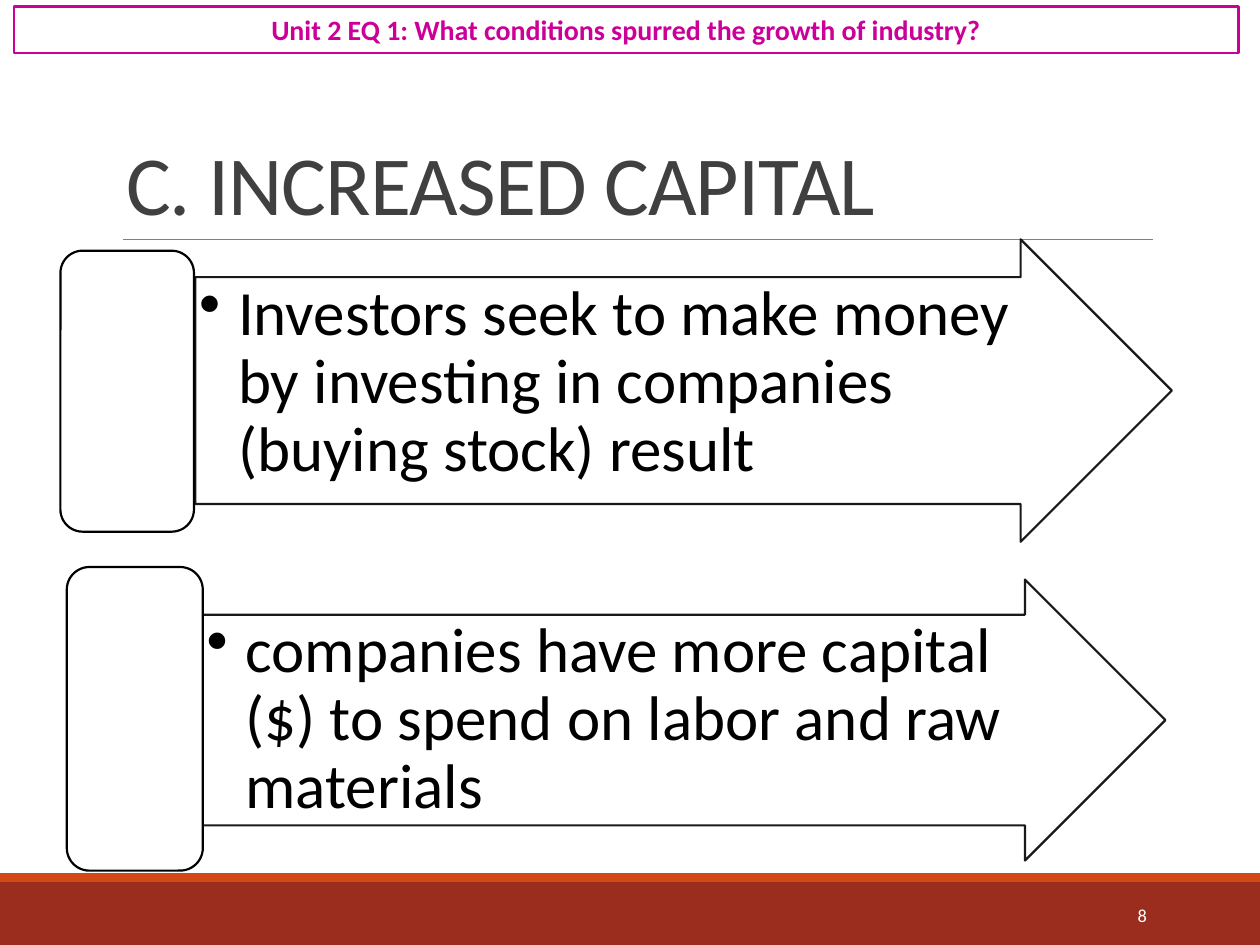
import pptx
import pptx.util
import pptx.dml.color
import pptx.enum.shapes
import pptx.enum.text
from lxml import etree
from pptx.oxml.ns import qn

Inches, Pt = pptx.util.Inches, pptx.util.Pt
KIND = pptx.enum.shapes.MSO_SHAPE
ALIGN = pptx.enum.text.PP_ALIGN
ANCHOR = pptx.enum.text.MSO_ANCHOR


def paint(shape, fill, line=None, width=1.25):
    shape.shadow.inherit = False
    shape.fill.solid()
    shape.fill.fore_color.rgb = pptx.dml.color.RGBColor.from_string(fill)
    if line:
        shape.line.color.rgb = pptx.dml.color.RGBColor.from_string(line)
        shape.line.width = Pt(width)
    else:
        shape.line.fill.background()


def write(shape, text, color, font, para=None, frame=None):
    body = shape.text_frame
    for name, value in {"word_wrap": True, **(frame or {})}.items():
        setattr(body, name, value)
    item = body.paragraphs[0]
    for name, value in (para or {}).items():
        setattr(item, name, value)
    run = item.add_run()
    run.text = text
    for name, value in {"name": "Calibri", **font}.items():
        setattr(run.font, name, value)
    run.font.color.rgb = pptx.dml.color.RGBColor.from_string(color)
    return item, run


deck = pptx.Presentation()
deck.slide_width, deck.slide_height = Inches(10), Inches(7.5)
slide = deck.slides.add_slide(deck.slide_layouts[5])
shapes = slide.shapes

# Footer bands
for top, height, color in [(7, 0.5, "9B2D1F"), (6.93, 0.07, "D34817")]:
    band = shapes.add_shape(KIND.RECTANGLE, 0, Inches(top), Inches(10), Inches(height))
    paint(band, color)

# Rule under the title
rule = shapes.add_connector(pptx.enum.shapes.MSO_CONNECTOR.STRAIGHT,
                            Inches(0.98), Inches(1.9), Inches(9.15), Inches(1.9))
rule.line.color.rgb = pptx.dml.color.RGBColor.from_string("808080")
rule.line.width = Pt(0.5)
etree.SubElement(rule._element.spPr, qn("a:effectLst"))

# Title
title = shapes.title
title.left, title.top = Inches(0.9), Inches(0.31)
title.width, title.height = Inches(8.25), Inches(1.59)
item, run = write(title, "C. INCREASED CAPITAL", "404040", {"size": Pt(48)},
                  {"alignment": ALIGN.LEFT, "line_spacing": 0.85},
                  {"vertical_anchor": ANCHOR.BOTTOM,
                   "auto_size": pptx.enum.text.MSO_AUTO_SIZE.NONE})
run.font._element.set("spc", "-50")

# Slide number
number = shapes.add_textbox(Inches(8.12), Inches(7.06), Inches(1.08), Inches(0.4))
write(number, "8", "FFFFFF", {"size": Pt(10.5)}, {"alignment": ALIGN.RIGHT},
      {"vertical_anchor": ANCHOR.MIDDLE})

# Unit question
banner = shapes.add_shape(KIND.RECTANGLE, Inches(0.11), Inches(0.05), Inches(9.72), Inches(0.37))
paint(banner, "FFFFFF", "CC0099", 1.5)
write(banner, "Unit 2 EQ 1: What conditions spurred the growth of industry?", "CC0099",
      {"size": Pt(16), "bold": True}, {"alignment": ALIGN.CENTER},
      {"vertical_anchor": ANCHOR.TOP})

# Arrows, each with a bullet and a rounded box at its tail
rows = [
    ((1.55, 1.9, 7.75, 2.4), (0.48, 1.99, 1.06, 2.23),
     "Investors seek to make money by investing in companies (buying stock) result"),
    ((1.61, 4.6, 7.64, 2.23), (0.53, 4.5, 1.08, 2.41),
     "companies have more capital ($) to spend on labor and raw materials"),
]
pad = {"margin_" + side: Inches(0.03) for side in ("left", "top", "right", "bottom")}
for place, tail, text in rows:
    arrow = shapes.add_shape(KIND.RIGHT_ARROW, *map(Inches, place))
    arrow.adjustments[0], arrow.adjustments[1] = 0.75, 0.5
    paint(arrow, "FFFFFF", "000000")
    for tint in arrow._element.spPr.iter(qn("a:srgbClr")):
        etree.SubElement(tint, qn("a:alpha"), val="90000")

    # Text fills the shaft: 3/4 of the height, ending 3/8 of it before the tip
    left, top, width, height = place
    note = shapes.add_textbox(Inches(left), Inches(top + height / 8),
                              Inches(width - height * 3 / 8), Inches(height * 3 / 4))
    item, run = write(note, text, "000000", {"size": Pt(36)},
                      {"line_spacing": 0.9, "level": 1, "alignment": ALIGN.LEFT},
                      {"vertical_anchor": ANCHOR.TOP, **pad})
    props = item._p.get_or_add_pPr()
    props.set("marL", str(Inches(0.31)))
    props.set("indent", str(-Inches(0.31)))
    etree.SubElement(props, qn("a:buChar"), char="•")

    box = shapes.add_shape(KIND.ROUNDED_RECTANGLE, *map(Inches, tail))
    paint(box, "FFFFFF", "000000")

deck.save("out.pptx")
